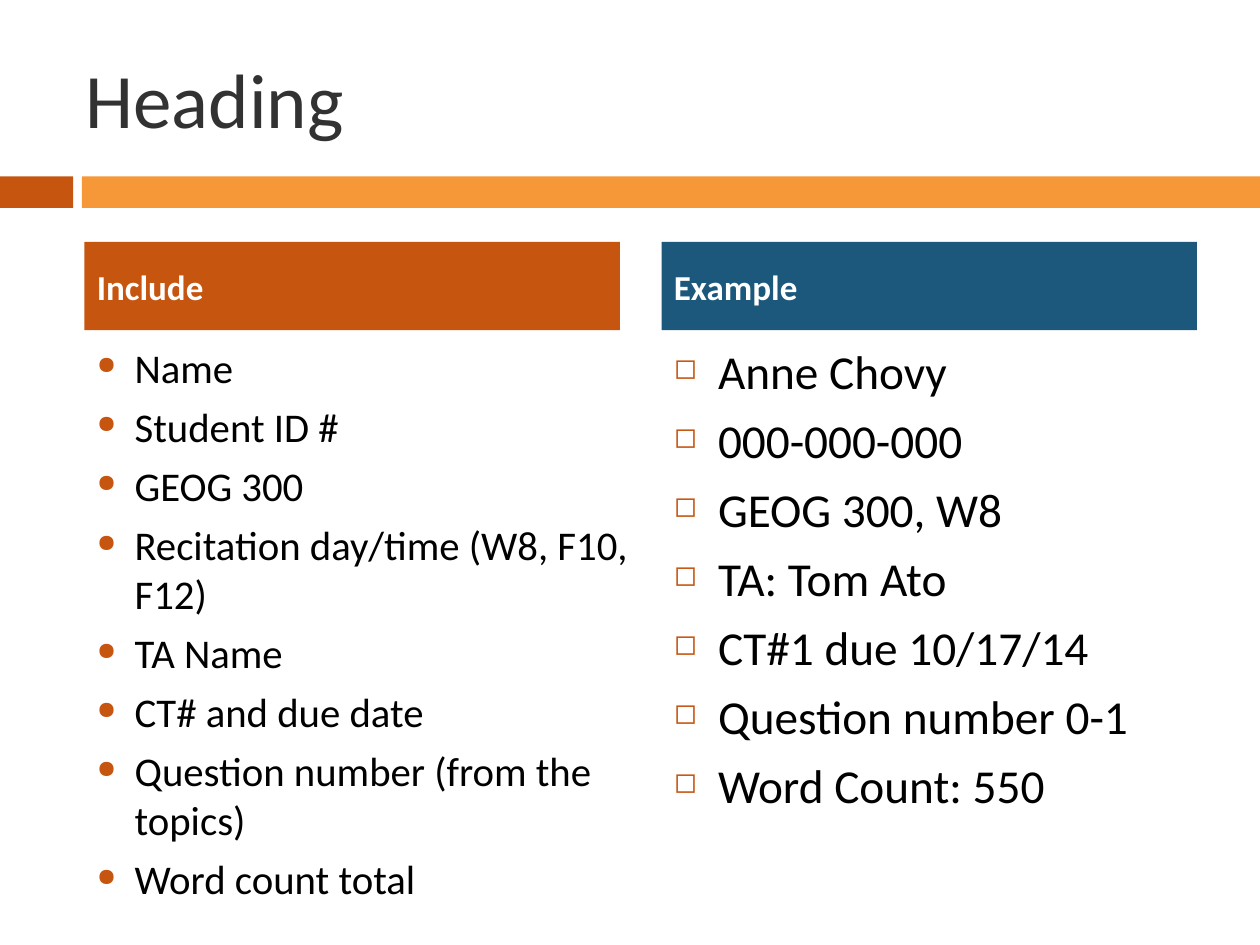
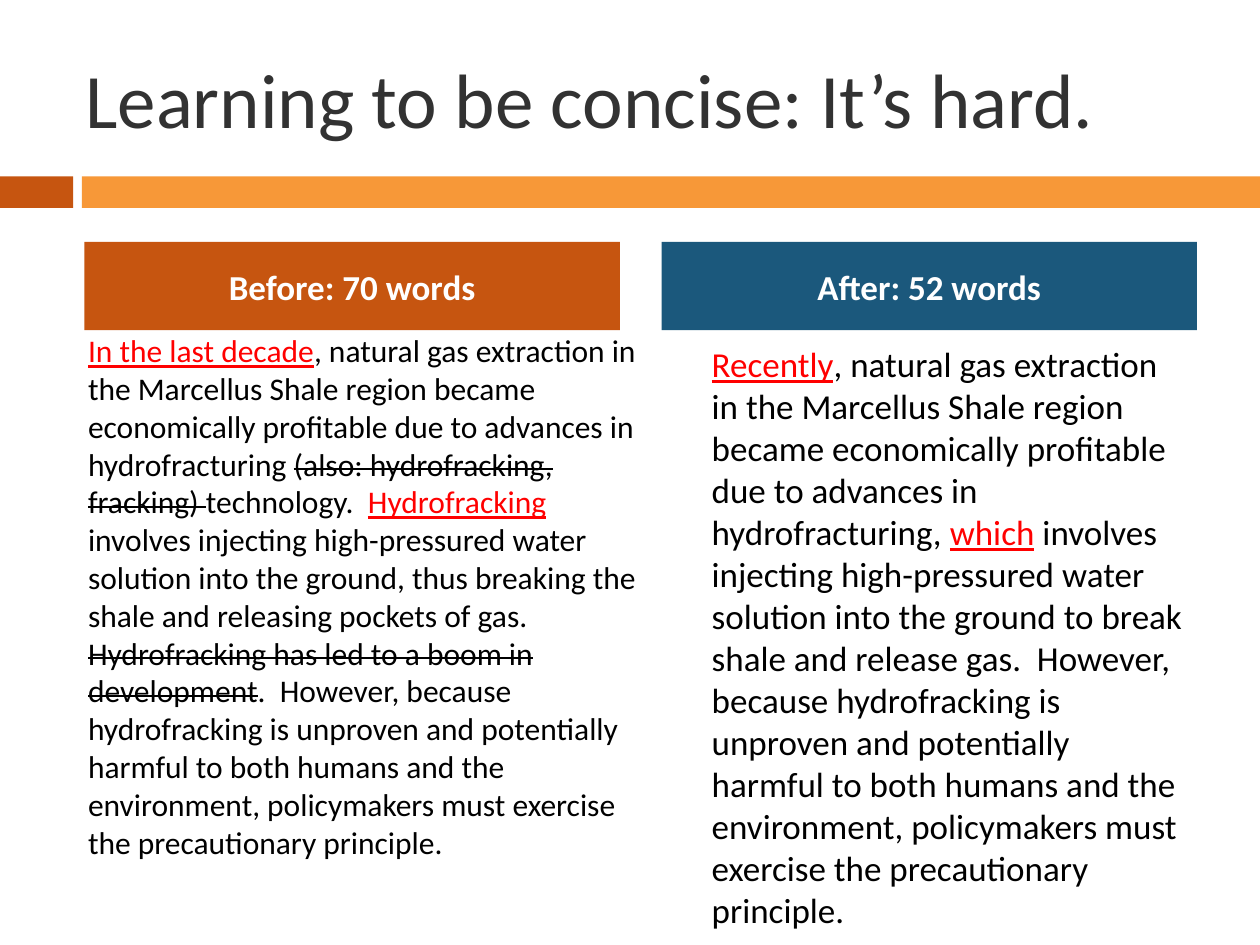
from dataclasses import dataclass
from lxml.etree import SubElement
from pptx import Presentation
from pptx.dml.color import RGBColor
from pptx.enum.shapes import MSO_SHAPE as Shape
from pptx.enum.text import MSO_ANCHOR as Anchor, PP_ALIGN as Align
from pptx.oxml.ns import qn
from pptx.util import Emu, Pt

SCALE = 9144
FONT = "Calibri"
RUST, GOLD, BLUE = "C65510", "F79838", "1B587C"
WHITE, BLACK, GREY, RED = "FFFFFF", "000000", "323232", "FF0000"


@dataclass(frozen=True)
class Box:
    left: int
    top: int
    width: int
    height: int


@dataclass(frozen=True)
class Bit:
    text: str
    mark: str = ""


@dataclass(frozen=True)
class Style:
    size: float
    colour: str = BLACK
    bold: bool = False
    before: float = 0
    indent: int = 0
    bullet: str = ""
    align: Align = Align.LEFT


@dataclass(frozen=True)
class Panel:
    head: str
    box: Box
    style: Style
    paras: list[list[Bit]]


@dataclass(frozen=True)
class Page:
    title: str
    align: Align
    panels: list[Panel]


BANDS = [(Box(0, 140, 58, 25), RUST), (Box(65, 140, 935, 25), GOLD)]
TITLE = Box(58, 30, 892, 95)
HEADS = [(Box(67, 192, 425, 70), RUST), (Box(525, 192, 425, 70), BLUE)]
RIGHT = Box(525, 267, 425, 392)


def px(count: int) -> Emu:
    return Emu(count * SCALE)


def rgb(code: str) -> RGBColor:
    return RGBColor.from_string(code)


def place(box: Box) -> list[Emu]:
    return [px(side) for side in (box.left, box.top, box.width, box.height)]


def add_rect(slide, box: Box, colour: str):
    rect = slide.shapes.add_shape(Shape.RECTANGLE, *place(box))
    rect.shadow.inherit = False
    rect.fill.solid()
    rect.fill.fore_color.rgb = rgb(colour)
    rect.line.fill.background()
    return rect


def add_bullet(props, sign: str) -> None:
    tint = SubElement(props, qn("a:buClr"))
    SubElement(tint, qn("a:srgbClr"), val=RUST)
    SubElement(props, qn("a:buSzPct"), val="60000")
    SubElement(props, qn("a:buChar"), char=sign)


def add_run(para, bit: Bit) -> None:
    run = para.add_run()
    run.text = bit.text
    if bit.mark == "new":
        run.font.color.rgb = rgb(RED)
        run.font.underline = True
    elif bit.mark == "cut":
        run._r.get_or_add_rPr().set("strike", "sngStrike")


def write(shape, paras: list[list[Bit]], style: Style, anchor: Anchor) -> None:
    frame = shape.text_frame
    frame.word_wrap = True
    frame.vertical_anchor = anchor
    for spot, bits in enumerate(paras):
        para = frame.add_paragraph() if spot else frame.paragraphs[0]
        para.alignment = style.align
        para.space_before = Pt(style.before)
        props = para._p.get_or_add_pPr()
        props.set("marL", str(px(style.indent)))
        props.set("indent", str(px(-style.indent if style.bullet else 0)))
        if style.bullet:
            add_bullet(props, style.bullet)
        font = para.font
        font.name = FONT
        font.size = Pt(style.size)
        font.bold = style.bold
        font.color.rgb = rgb(style.colour)
        for bit in bits:
            add_run(para, bit)


def add_text(slide, box: Box, paras: list[list[Bit]], style: Style,
             anchor: Anchor = Anchor.TOP) -> None:
    write(slide.shapes.add_textbox(*place(box)), paras, style, anchor)


def add_page(deck, page: Page) -> None:
    slide = deck.slides.add_slide(deck.slide_layouts[6])
    for box, colour in BANDS:
        add_rect(slide, box, colour)
    add_text(slide, TITLE, [[Bit(page.title)]], Style(44, GREY), Anchor.MIDDLE)
    head = Style(20, WHITE, bold=True, before=5.8, align=page.align)
    for panel, (box, colour) in zip(page.panels, HEADS):
        rect = add_rect(slide, box, colour)
        write(rect, [[Bit(panel.head)]], head, Anchor.MIDDLE)
    for panel in page.panels:
        add_text(slide, panel.box, panel.paras, panel.style)


def lines(*texts: str) -> list[list[Bit]]:
    return [[Bit(text)] for text in texts]


PAGES = [
    Page("Heading", Align.LEFT, [
        Panel("Include", Box(67, 267, 442, 400),
              Style(23.3, before=5.8, indent=30, bullet="●"),
              lines("Name", "Student ID #", "GEOG 300",
                    "Recitation day/time (W8, F10, F12)", "TA Name",
                    "CT# and due date", "Question number (from the topics)",
                    "Word count total")),
        Panel("Example", RIGHT,
              Style(27, before=7, indent=35, bullet="◻"),
              lines("Anne Chovy", "000-000-000", "GEOG 300, W8",
                    "TA: Tom Ato", "CT#1 due 10/17/14",
                    "Question number 0-1", "Word Count: 550")),
    ]),
    Page("Learning to be concise: It’s hard.", Align.CENTER, [
        Panel("Before: 70 words", Box(25, 258, 492, 432),
              Style(18, before=7, indent=35), [[
                  Bit("In the last decade", "new"),
                  Bit(", natural gas extraction in the Marcellus Shale region "
                      "became economically profitable due to advances in "
                      "hydrofracturing "),
                  Bit("(also: hydrofracking, fracking) ", "cut"),
                  Bit("technology.  "),
                  Bit("Hydrofracking", "new"),
                  Bit(" involves injecting high-pressured water solution into "
                      "the ground, thus breaking the shale and releasing "
                      "pockets of gas.  "),
                  Bit("Hydrofracking has led to a boom in development", "cut"),
                  Bit(".  However, because hydrofracking is unproven and "
                      "potentially harmful to both humans and the environment, "
                      "policymakers must exercise the precautionary "
                      "principle."),
              ]]),
        Panel("After: 52 words", RIGHT,
              Style(20, before=5.8, indent=30), [[
                  Bit("Recently", "new"),
                  Bit(", natural gas extraction in the Marcellus Shale region "
                      "became economically profitable due to advances in "
                      "hydrofracturing, "),
                  Bit("which", "new"),
                  Bit(" involves injecting high-pressured water solution into "
                      "the ground to break shale and release gas.  However, "
                      "because hydrofracking is unproven and potentially "
                      "harmful to both humans and the environment, "
                      "policymakers must exercise the precautionary "
                      "principle."),
              ]]),
    ]),
]


def main() -> None:
    deck = Presentation()
    deck.slide_width, deck.slide_height = px(1000), px(750)
    for page in PAGES:
        add_page(deck, page)
    deck.save("out.pptx")


if __name__ == "__main__":
    main()
